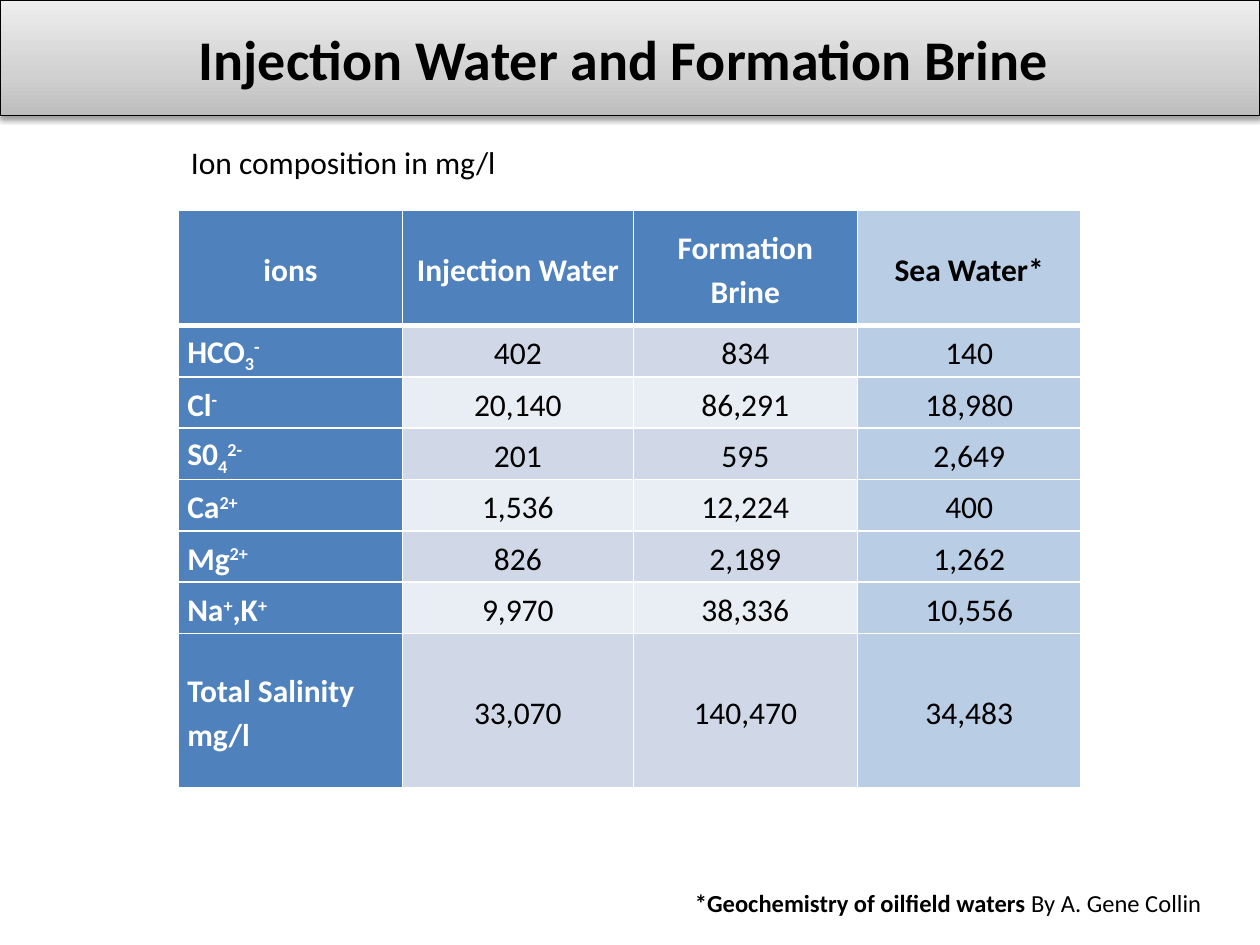
from lxml import etree
from pptx import Presentation, oxml, util as u
from pptx.dml.color import RGBColor
from pptx.enum import text as t
from pptx.oxml import ns

BLACK = RGBColor(0x00, 0x00, 0x00)
WHITE = RGBColor(0xFF, 0xFF, 0xFF)
BLUE = RGBColor(0x4F, 0x81, 0xBD)
SEA_BLUE = RGBColor(0xB9, 0xCD, 0xE5)
BANDS = RGBColor(0xD0, 0xD8, 0xE8), RGBColor(0xE9, 0xED, 0xF4)
TITLE_STOPS = (
    (0, RGBColor(0xBD, 0xBD, 0xBD)),
    (35, RGBColor(0xD1, 0xD1, 0xD1)),
    (100, RGBColor(0xEE, 0xEE, 0xEE)),
)
FONT = "Calibri"
UNIT = u.Inches(10) // 120
COLUMNS = 21.33, 22, 21.33, 21.33
ROWS = [11] + [4.89] * 6 + [14.67]
BASELINES = {"_": "-25000", "^": "30000"}
IONS = (
    ("ions", "Injection Water", "Formation Brine", "Sea Water*"),
    ("HCO|_3|^-", "402", "834", "140"),
    ("Cl|^-", "20,140", "86,291", "18,980"),
    ("S0|_4|^2-", "201", "595", "2,649"),
    ("Ca|^2+", "1,536", "12,224", "400"),
    ("Mg|^2+", "826", "2,189", "1,262"),
    ("Na|^+|,K|^+", "9,970", "38,336", "10,556"),
    ("Total Salinity mg/l", "33,070", "140,470", "34,483"),
)


def grid(*counts):
    """Turn counts of grid units into lengths."""
    return [u.Emu(round(count * UNIT)) for count in counts]


def set_font(font, size, color=BLACK, bold=False):
    """Set the typeface, size, colour and weight of a font."""
    font.name, font.size, font.bold = FONT, u.Pt(size), bold
    font.color.rgb = color


def add_title(slide, words):
    """Turn the title placeholder into a shaded band across the top."""
    title = slide.shapes.title
    title.left, title.top, title.width, title.height = grid(0, 0, 120, 11)
    stops = "".join(
        f'<a:gs pos="{place * 1000}"><a:srgbClr val="{color}"/></a:gs>'
        for place, color in TITLE_STOPS
    )
    namespace = ns.nsdecls("a")
    properties = title._element.spPr
    properties.append(oxml.parse_xml(
        f'<a:gradFill {namespace} rotWithShape="1"><a:gsLst>{stops}</a:gsLst>'
        '<a:lin ang="16200000" scaled="1"/></a:gradFill>'
    ))
    title.line.color.rgb = BLACK
    title.line.width = u.Pt(0.75)
    properties.append(oxml.parse_xml(
        f'<a:effectLst {namespace}><a:outerShdw blurRad="{u.Pt(3.1)}" '
        f'dist="{u.Pt(1.6)}" dir="5400000" rotWithShape="0">'
        '<a:srgbClr val="000000"><a:alpha val="38000"/></a:srgbClr>'
        '</a:outerShdw></a:effectLst>'
    ))
    frame = title.text_frame
    frame.text = words
    frame.auto_size = t.MSO_AUTO_SIZE.NONE
    frame.vertical_anchor = t.MSO_ANCHOR.MIDDLE
    paragraph = frame.paragraphs[0]
    paragraph.alignment = t.PP_ALIGN.CENTER
    set_font(paragraph.font, 32, bold=True)


def add_text(slide, place, size, *runs):
    """Add a text box of one paragraph from (words, bold) runs."""
    frame = slide.shapes.add_textbox(*grid(*place)).text_frame
    frame.word_wrap = True
    frame.auto_size = t.MSO_AUTO_SIZE.SHAPE_TO_FIT_TEXT
    for words, bold in runs:
        run = frame.paragraphs[0].add_run()
        run.text = words
        set_font(run.font, size, bold=bold)


def set_borders(cell, **widths):
    """Draw white borders, given in points by side."""
    properties = cell._tc.get_or_add_tcPr()
    for index, (side, width) in enumerate(widths.items()):
        line = etree.Element(ns.qn(f"a:ln{side}"), w=str(u.Pt(width)))
        fill = etree.SubElement(line, ns.qn("a:solidFill"))
        etree.SubElement(fill, ns.qn("a:srgbClr"), val=str(WHITE))
        properties.insert(index, line)


def fill_cell(cell, words, row, column):
    """Write one ion table cell and style it by its row and column."""
    header, label, sea = row == 0, column == 0, column == 3
    cell.fill.solid()
    if sea:
        cell.fill.fore_color.rgb = SEA_BLUE
    else:
        cell.fill.fore_color.rgb = BLUE if header or label else BANDS[(row - 1) % 2]
    set_borders(cell, L=1, R=1, T=3 if row == 1 else 1, B=3 if header else 1)
    cell.margin_left = cell.margin_right = u.Inches(0.07)
    cell.margin_top = cell.margin_bottom = 0
    cell.vertical_anchor = t.MSO_ANCHOR.MIDDLE
    paragraph = cell.text_frame.paragraphs[0]
    paragraph.line_spacing = 1.15
    paragraph.alignment = t.PP_ALIGN.LEFT if label and not header else t.PP_ALIGN.CENTER
    color = WHITE if label or (header and not sea) else BLACK
    for part in words.split("|"):
        run = paragraph.add_run()
        run.text = part.lstrip("_^")
        set_font(run.font, 18, color, header or label)
        if part[0] in BASELINES:
            run._r.get_or_add_rPr().set("baseline", BASELINES[part[0]])


def add_ion_table(slide):
    """Add the table of ion concentrations."""
    place = grid(17, 20, sum(COLUMNS), sum(ROWS))
    table = slide.shapes.add_table(len(ROWS), len(COLUMNS), *place).table
    table.first_col = True
    for column, width in zip(table.columns, grid(*COLUMNS)):
        column.width = width
    for row, height in zip(table.rows, grid(*ROWS)):
        row.height = height
    for row, values in enumerate(IONS):
        for column, words in enumerate(values):
            fill_cell(table.cell(row, column), words, row, column)


def main():
    """Build and save the slide."""
    presentation = Presentation()
    presentation.slide_width, presentation.slide_height = grid(120, 90)
    slide = presentation.slides.add_slide(presentation.slide_layouts[5])
    add_title(slide, "Injection Water and Formation Brine ")
    add_ion_table(slide)
    add_text(slide, (17, 13, 33, 4.8), 18, ("Ion composition in mg/l", False))
    add_text(slide, (65, 84, 55, 4.1), 14,
             ("*Geochemistry of oilfield waters ", True), ("By A. Gene Collin", False))
    presentation.save("out.pptx")


if __name__ == "__main__":
    main()
